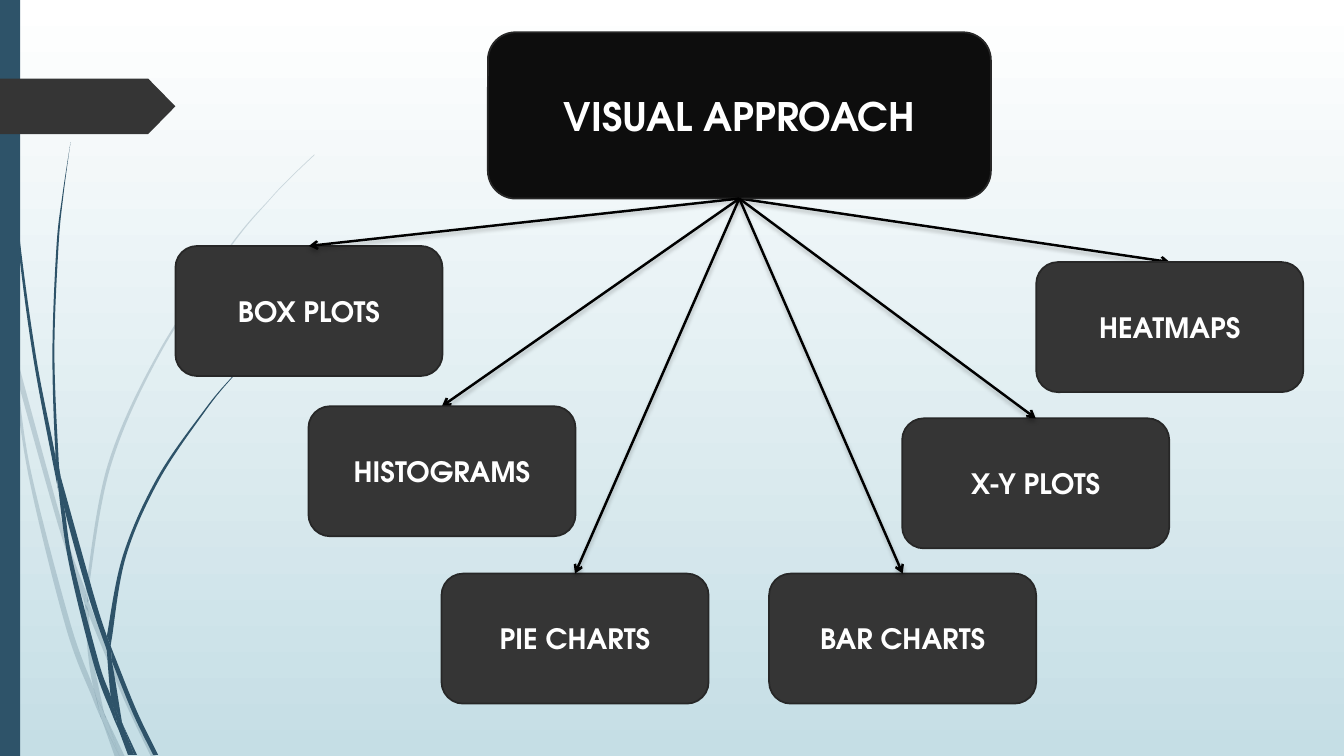
from lxml import etree
from pptx import Presentation
from pptx import util as u
from pptx.dml.color import RGBColor
from pptx.enum import shapes, text
from pptx.oxml import parse_xml
from pptx.oxml.ns import nsdecls, qn

FONT = "TeX Gyre Adventor"
TEAL, DARK, BLACK, EDGE = "2E5369", "353535", "0D0D0D", "272727"
BOX_W, BOX_H = 2.65, 1.29

# Each blade of grass: points along its one edge, then along its other
PALE = [
    ([(0, 2.82), (.09, 3.22), (.11, 3.5)], [(0, 2.99), (.1, 3.44), (.11, 3.5)]),
    ([(.14, 3.45), (.62, 5.2), (.85, 5.86)],
     [(.17, 3.76), (.58, 5.22), (.84, 5.99)]),
    ([(.88, 5.96), (.92, 6.07), (1.27, 6.92), (1.55, 7.51)],
     [(.88, 6.1), (1.23, 6.94), (1.5, 7.51)]),
    ([(1.05, 7.11), (1.24, 7.51)], [(1.05, 7.11), (1.19, 7.51)]),
    ([(.11, 3.5), (.17, 3.76), (.31, 4.69), (.7, 6.19), (.93, 6.83),
      (.99, 7.07), (1.01, 7.14)],
     [(.11, 3.5), (.28, 4.7), (.65, 6.21), (.92, 6.93), (1.01, 7.14)]),
    ([(.84, 5.99), (.88, 6.08), (.91, 6.46), (1.03, 7.06), (1.05, 7.11)],
     [(.84, 5.99), (.87, 6.46), (.93, 6.83), (1.05, 7.11)]),
    ([(3.12, 1.53), (2.89, 1.75), (2.68, 1.97), (2.28, 2.44), (1.58, 3.48),
      (1.07, 4.61), (.85, 5.84)],
     [(3.12, 1.54), (2.9, 1.75), (2.68, 1.98), (2.29, 2.45), (1.6, 3.49),
      (1.1, 4.62), (.88, 5.84), (.88, 5.96)]),
    ([(1.01, 7.14), (1.14, 7.51)], [(1.01, 7.14), (1.19, 7.51)]),
    ([(.85, 5.86), (.84, 5.99), (.88, 6.08)], [(.88, 5.96), (.88, 6.1)]),
    ([(.93, 6.83), (.96, 6.92), (1.05, 7.11), (1.19, 7.51)],
     [(.93, 6.83), (.99, 7.07), (1.01, 7.14), (1.19, 7.51)]),
]
BOLD = [
    ([(.03, 0), (.04, .48), (.07, 1.1), (.17, 2.33), (.33, 3.55),
      (.56, 4.77), (.57, 4.81)],
     [(.04, 0), (.05, .48), (.08, 1.09), (.19, 2.32), (.36, 3.55),
      (.55, 4.53), (.57, 4.81)]),
    ([(.6, 4.72), (.93, 5.9), (1.06, 6.31)],
     [(.6, 4.72), (.64, 5.05), (.88, 5.92), (1.06, 6.45)]),
    ([(1.1, 6.41), (1.13, 6.49), (1.36, 7.06), (1.57, 7.49)],
     [(1.11, 6.56), (1.32, 7.08), (1.52, 7.49)]),
    ([(.57, 4.77), (.64, 5.05), (.72, 5.56), (.98, 6.57), (1.1, 6.91),
      (1.16, 7.17), (1.17, 7.22)],
     [(.57, 4.77), (.68, 5.57), (.93, 6.59), (1.11, 7.08), (1.17, 7.22)]),
    ([(.7, 1.41), (.62, 1.93), (.56, 2.45), (.52, 3.49), (.55, 4.49),
      (.6, 4.72)],
     [(.7, 1.41), (.63, 1.93), (.58, 2.45), (.54, 3.49), (.58, 4.53),
      (.6, 4.72)]),
    ([(1.22, 7.19), (1.36, 7.49)], [(1.22, 7.19), (1.33, 7.49)]),
    ([(.55, 4.49), (.6, 4.72), (.64, 5.05)],
     [(.55, 4.53), (.57, 4.77), (.64, 5.05)]),
    ([(2.6, 3.44), (2.45, 3.58), (2.31, 3.73), (2.04, 4.05), (1.56, 4.74),
      (1.22, 5.51), (1.06, 6.31)],
     [(2.61, 3.44), (2.45, 3.59), (2.31, 3.74), (2.05, 4.06), (1.58, 4.76),
      (1.25, 5.52), (1.11, 6.33), (1.1, 6.41)]),
    ([(1.17, 7.22), (1.31, 7.49)], [(1.17, 7.22), (1.27, 7.49)]),
    ([(1.06, 6.45), (1.1, 6.91), (1.16, 7.06), (1.22, 7.19)],
     [(1.06, 6.45), (1.11, 6.56), (1.21, 7.16), (1.22, 7.19)]),
    ([(1.06, 6.31), (1.06, 6.45), (1.11, 6.56)], [(1.06, 6.31), (1.1, 6.41)]),
    ([(1.1, 6.91), (1.16, 7.06), (1.22, 7.19), (1.33, 7.49)],
     [(1.1, 6.91), (1.16, 7.17), (1.17, 7.22), (1.3, 7.49)]),
]
# Label, left, top, whether its arrow lies behind the boxes
TOPICS = [
    ("BOX PLOTS", 1.74, 2.44, False),
    ("HISTOGRAMS", 3.06, 4.03, True),
    ("PIE CHARTS", 4.38, 5.69, False),
    ("BAR CHARTS", 7.63, 5.69, False),
    ("X-Y PLOTS", 8.95, 4.15, False),
    ("HEATMAPS", 10.28, 2.6, True),
]


def color(code):
    return RGBColor.from_string(code)


def paint(shape, fill, edge=None):
    shape.shadow.inherit = False
    shape.fill.solid()
    shape.fill.fore_color.rgb = color(fill)
    if edge:
        shape.line.color.rgb = color(edge)
        shape.line.width = u.Pt(1.25)
    else:
        shape.line.fill.background()


def bend(side, lines):
    """Turn the straight segments along one side into smooth curves."""
    ends = [side[0], *side, side[-1]]
    for a, b, c, d, line in zip(ends, ends[1:], ends[2:], ends[3:], lines):
        line.tag = qn("a:cubicBezTo")
        first = [q + (r - p) / 6 for p, q, r in zip(a, b, c)]
        second = [q - (r - p) / 6 for p, q, r in zip(b, c, d)]
        for i, (x, y) in enumerate((first, second)):
            spot = etree.Element(qn("a:pt"), x=str(round(x)), y=str(round(y)))
            line.insert(i, spot)


def blade(slide, one, other, alpha=None):
    rim = [tuple(map(u.Inches, spot)) for spot in one + other[::-1]]
    pen = slide.shapes.build_freeform(*rim[0])
    pen.add_line_segments(rim[1:], close=True)
    shape = pen.convert_to_shape()
    paint(shape, TEAL)
    rim = [(x - shape.left, y - shape.top) for x, y in rim]
    lines = list(shape._element.iter(qn("a:lnTo")))
    n = len(one)
    bend(rim[:n], lines[:n - 1])
    bend(rim[n:], lines[n:])
    if alpha:
        tone = next(shape._element.spPr.iter(qn("a:srgbClr")))
        etree.SubElement(tone, qn("a:alpha")).set("val", str(alpha * 1000))


def block(slide, kind, x, y, w, h, fill, edge=None):
    shape = slide.shapes.add_shape(kind, *map(u.Inches, (x, y, w, h)))
    paint(shape, fill, edge)
    return shape


def box(slide, label, x, y, w=BOX_W, h=BOX_H, fill=DARK, size=20):
    shape = block(slide, shapes.MSO_SHAPE.ROUNDED_RECTANGLE,
                  x, y, w, h, fill, EDGE)
    frame = shape.text_frame
    frame.text = label
    frame.word_wrap = True
    frame.vertical_anchor = text.MSO_ANCHOR.MIDDLE
    para = frame.paragraphs[0]
    para.alignment = text.PP_ALIGN.CENTER
    font = para.runs[0].font
    font.name, font.size, font.bold = FONT, u.Pt(size), True
    font.color.rgb = color("FFFFFF")
    return shape


def arrow(slide, start, end):
    line = slide.shapes.add_connector(shapes.MSO_CONNECTOR.STRAIGHT, 0, 0, 0, 0)
    line.begin_connect(start, 2)
    line.end_connect(end, 0)
    line.line.color.rgb = color("000000")
    line.line.width = u.Pt(1.75)
    edge = line.line._get_or_add_ln()
    etree.SubElement(edge, qn("a:tailEnd")).set("type", "arrow")
    edge.addnext(parse_xml(
        f'<a:effectLst {nsdecls("a")}>'
        f'<a:outerShdw blurRad="{u.Pt(3)}" dist="{u.Pt(2)}" dir="5400000" '
        'rotWithShape="0"><a:srgbClr val="000000"><a:alpha val="25000"/>'
        '</a:srgbClr></a:outerShdw></a:effectLst>'))
    return line


def backdrop(slide):
    fill = slide.background.fill
    fill.gradient()
    fill.gradient_angle = 270
    for stop, code in zip(fill.gradient_stops, ("FFFFFF", "C5DEE5")):
        stop.color.rgb = color(code)
    for blades, alpha in ((PALE, 20), (BOLD, None)):
        for one, other in blades:
            blade(slide, one, other, alpha)
    block(slide, shapes.MSO_SHAPE.RECTANGLE, 0, 0, .2, 7.5, TEAL)
    tag = block(slide, shapes.MSO_SHAPE.PENTAGON, 0, .78, 1.74, .55, DARK)
    tag.adjustments[0] = .49


def main():
    prs = Presentation()
    prs.slide_width, prs.slide_height = u.Inches(40 / 3), u.Inches(7.5)
    slide = prs.slides.add_slide(prs.slide_layouts[6])
    backdrop(slide)
    title = box(slide, "VISUAL APPROACH", 4.84, .32, 4.99, 1.65, BLACK, 28)
    for label, x, y, behind in TOPICS:
        line = arrow(slide, title, box(slide, label, x, y))
        if behind:
            title._element.addprevious(line._element)
    prs.save("out.pptx")


if __name__ == "__main__":
    main()
